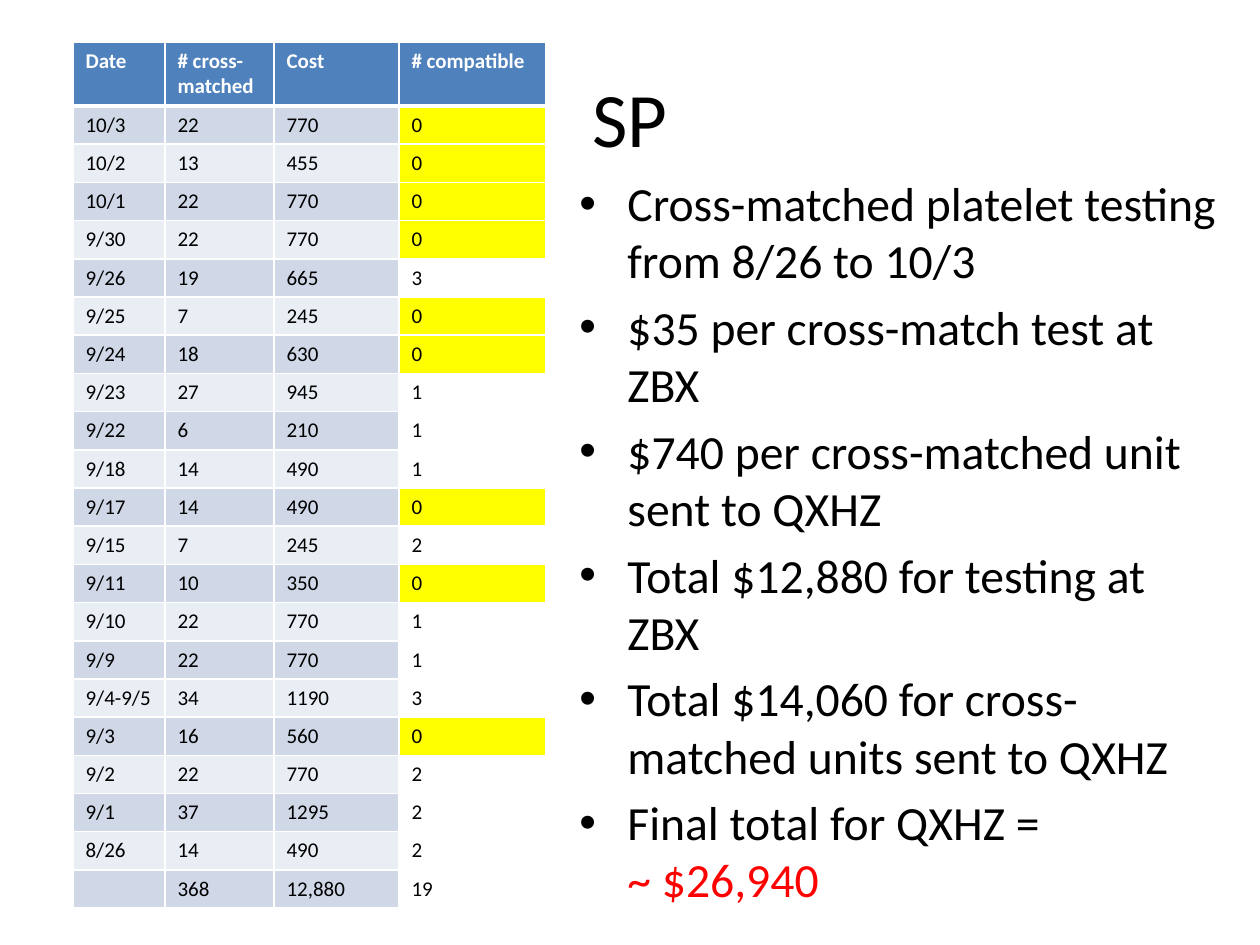
"""Build the slide on cross-matched platelet testing costs."""
from typing import NamedTuple

import pptx
import pptx.dml.color
import pptx.enum.text
import pptx.oxml
import pptx.oxml.ns
import pptx.util

FONT = "Calibri"
BLACK, WHITE, RED, YELLOW = "000000", "FFFFFF", "FF0000", "FFFF00"
HEADER_FILL = "4F81BD"
BAND_FILLS = ("D0D8E8", "E9EDF4")
TEST_PRICE = 35
TABLE_TEXT_SIZE = 12
HEADER_HEIGHT, BODY_HEIGHT = 64, 803
COLUMN_WIDTHS = (92, 109, 125, 147)
HEADINGS = ("Date", "# cross-matched", "Cost", "# compatible")


class Test(NamedTuple):
    date: str
    matched: int
    compatible: int


class Run(NamedTuple):
    text: str
    color: str = BLACK


class Box(NamedTuple):
    left: int
    top: int
    width: int
    height: int


TESTS = [
    Test("10/3", 22, 0), Test("10/2", 13, 0), Test("10/1", 22, 0),
    Test("9/30", 22, 0), Test("9/26", 19, 3), Test("9/25", 7, 0),
    Test("9/24", 18, 0), Test("9/23", 27, 1), Test("9/22", 6, 1),
    Test("9/18", 14, 1), Test("9/17", 14, 0), Test("9/15", 7, 2),
    Test("9/11", 10, 0), Test("9/10", 22, 1), Test("9/9", 22, 1),
    Test("9/4-9/5", 34, 3), Test("9/3", 16, 0), Test("9/2", 22, 2),
    Test("9/1", 37, 2), Test("8/26", 14, 2),
]
BULLETS = [
    [Run("Cross-matched platelet testing from 8/26 to 10/3")],
    [Run("$35 per cross-match test at ZBX")],
    [Run("$740 per cross-matched unit sent to QXHZ")],
    [Run("Total $12,880 for testing at ZBX")],
    [Run("Total $14,060 for cross-matched units sent to QXHZ")],
    [Run("Final total for QXHZ ="), Run("~ $26,940", RED)],
]


def px(length: int) -> int:
    """Turn pixels into EMU."""
    return round(length * 914400 / 126)


def rgb(color: str) -> pptx.dml.color.RGBColor:
    """Turn a hex string into a colour."""
    return pptx.dml.color.RGBColor.from_string(color)


def add_run(p, text: str, size: float, color: str, bold: bool = False) -> None:
    """Add one formatted run to a paragraph."""
    r = p.add_run()
    r.text = text
    r.font.name = FONT
    r.font.size = pptx.util.Pt(size)
    r.font.bold = bold
    r.font.color.rgb = rgb(color)


def add_box(s, box: Box):
    """Add a wrapping text box and return its text frame."""
    tf = s.shapes.add_textbox(*map(px, box)).text_frame
    tf.word_wrap = True
    return tf


def add_title(s, text: str, box: Box) -> None:
    """Add the centred slide title."""
    tf = add_box(s, box)
    tf.vertical_anchor = pptx.enum.text.MSO_ANCHOR.MIDDLE
    p = tf.paragraphs[0]
    p.alignment = pptx.enum.text.PP_ALIGN.CENTER
    add_run(p, text, 44, BLACK)


def add_bullets(s, bullets: list[list[Run]], box: Box) -> None:
    """Add the bulleted list, each further run on its own line."""
    tf = add_box(s, box)
    for i, runs in enumerate(bullets):
        p = tf.paragraphs[0] if i == 0 else tf.add_paragraph()
        p.space_before = pptx.util.Pt(5.4)
        pPr = p._p.get_or_add_pPr()
        pPr.set("marL", str(px(48)))
        pPr.set("indent", str(-px(48)))
        ns = pptx.oxml.ns.nsdecls("a")
        pPr.append(pptx.oxml.parse_xml(f'<a:buFont {ns} typeface="Arial"/>'))
        pPr.append(pptx.oxml.parse_xml(f'<a:buChar {ns} char="•"/>'))
        for j, run in enumerate(runs):
            if j:
                p.add_line_break()
            add_run(p, run.text, 27.2, run.color)


def add_borders(cell, top: int, bottom: int) -> None:
    """Give a cell white borders, with top and bottom widths in points."""
    tcPr = cell._tc.get_or_add_tcPr()
    for side, width in (("L", 1), ("R", 1), ("T", top), ("B", bottom)):
        tcPr.append(pptx.oxml.parse_xml(
            f'<a:ln{side} {pptx.oxml.ns.nsdecls("a")} w="{pptx.util.Pt(width)}">'
            f'<a:solidFill><a:srgbClr val="{WHITE}"/></a:solidFill></a:ln{side}>'))


def fill_cell(cell, text: str, fill: str, row: int) -> None:
    """Set the borders, fill and text of one table cell."""
    header = row == 0
    add_borders(cell, 3 if row == 1 else 1, 3 if header else 1)
    cell.fill.solid()
    cell.fill.fore_color.rgb = rgb(fill)
    p = cell.text_frame.paragraphs[0]
    if text:
        add_run(p, text, TABLE_TEXT_SIZE, WHITE if header else BLACK, header)
    else:
        p._p.append(pptx.oxml.parse_xml(
            f'<a:endParaRPr {pptx.oxml.ns.nsdecls("a")} sz="{TABLE_TEXT_SIZE * 100}"/>'))


def cell_fill(row: int, col: int, text: str) -> str:
    """Choose a fill: header, banded row, or marked when nothing matched."""
    if row == 0:
        return HEADER_FILL
    if col == len(HEADINGS) - 1:
        return YELLOW if text == "0" else WHITE
    return BAND_FILLS[(row - 1) % 2]


def add_test_table(s, tests: list[Test], left: int, top: int) -> None:
    """Add the table of tests with its totals row."""
    matched = sum(t.matched for t in tests)
    compatible = sum(t.compatible for t in tests)
    rows = [HEADINGS]
    rows += [(t.date, str(t.matched), str(t.matched * TEST_PRICE), str(t.compatible))
             for t in tests]
    rows.append(("", str(matched), f"{matched * TEST_PRICE:,}", str(compatible)))
    box = Box(left, top, sum(COLUMN_WIDTHS), HEADER_HEIGHT + BODY_HEIGHT)
    row_height = px(BODY_HEIGHT) // (len(rows) - 1)
    table = s.shapes.add_table(len(rows), len(HEADINGS), *map(px, box)).table
    for column, width in zip(table.columns, COLUMN_WIDTHS):
        column.width = px(width)
    for i, values in enumerate(rows):
        table.rows[i].height = row_height if i else px(HEADER_HEIGHT)
        for j, text in enumerate(values):
            fill_cell(table.cell(i, j), text, cell_fill(i, j, text), i)


def main() -> None:
    """Build and save the slide."""
    prs = pptx.Presentation()
    prs.slide_width, prs.slide_height = px(1260), px(945)
    s = prs.slides.add_slide(prs.slide_layouts[6])
    add_title(s, "SP", Box(63, 38, 1134, 158))
    add_bullets(s, BULLETS, Box(567, 168, 662, 665))
    add_test_table(s, TESTS, 73, 42)
    prs.save("out.pptx")


if __name__ == "__main__":
    main()
